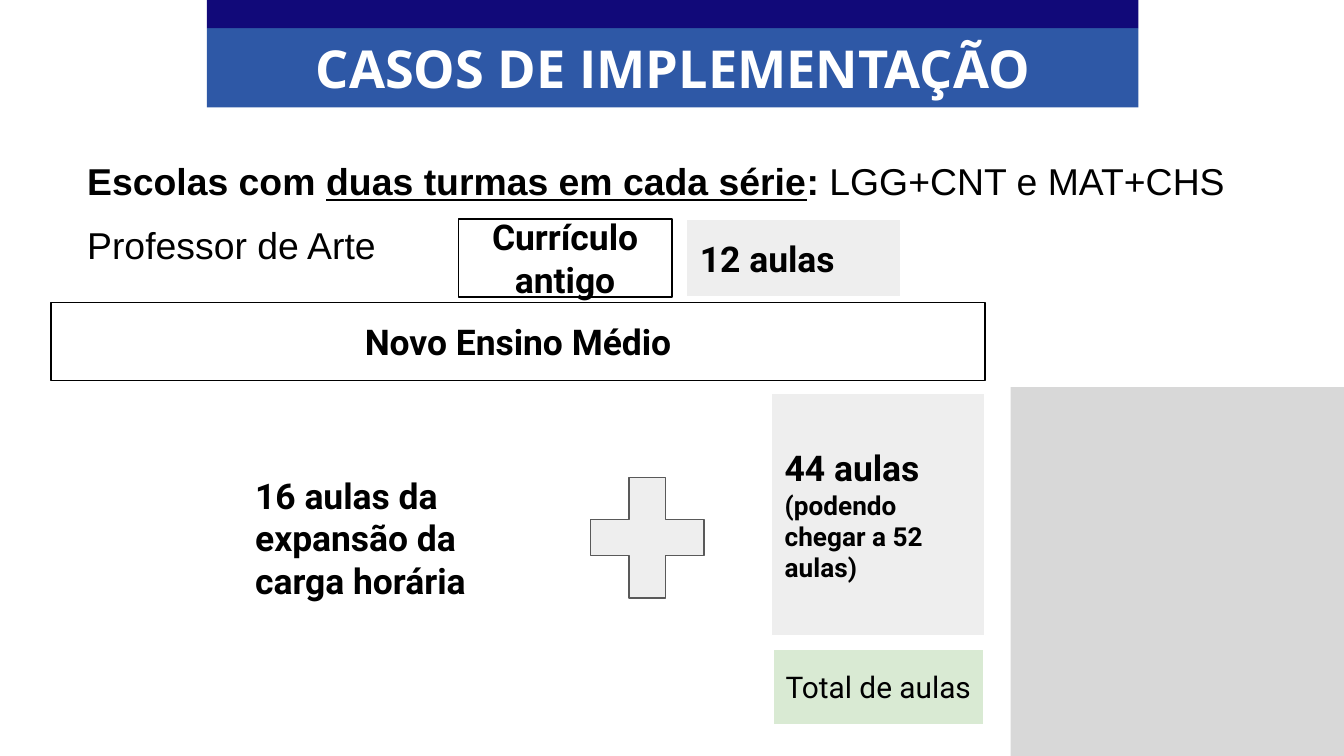
from dataclasses import dataclass

from lxml import etree
from pptx import Presentation
from pptx import util as u
from pptx.dml.color import RGBColor
from pptx.enum import shapes, text
from pptx.oxml.ns import qn


@dataclass(frozen=True)
class Theme:
    navy: str = "110979"
    blue: str = "2E58A6"
    white: str = "FFFFFF"
    black: str = "000000"
    pale: str = "EEEEEE"
    green: str = "D9EAD3"
    grey: str = "BFBFBF"
    outline: str = "595959"
    title_font: str = "Open Sans"
    body_font: str = "Arial"
    card_font: str = "Roboto"
    title_size: int = 28
    body_size: int = 20
    card_size: int = 19
    total_size: int = 16
    note_size: int = 14


THEME = Theme()
CELL = u.Inches(0.1)
COLUMNS, ROWS = 100, 56.25
BANNER_LEFT, BANNER_WIDTH = 15.4, 69.3
CARD_WIDTH, CARD_HEIGHT = 15.9, 5.8
CURRICULUM_TOP = 16.3
RESULT_LEFT = 57.4
LEFT, CENTER = text.PP_ALIGN.LEFT, text.PP_ALIGN.CENTER


def place(*cells):
    return [round(CELL * count) for count in cells]


def style_run(run, font, size, color, bold=True, underline=False):
    run.font.name = font
    run.font.size = u.Pt(size)
    run.font.color.rgb = RGBColor.from_string(color)
    run.font.bold = bold
    run.font.underline = underline


def set_frame(frame, side=0.1, vertical=0.1):
    frame.word_wrap = True
    frame.margin_left = frame.margin_right = u.Inches(side)
    frame.margin_top = frame.margin_bottom = u.Inches(vertical)


def add_block(slide, area, fill=None, line=None, weight=0.75,
              preset=shapes.MSO_SHAPE.RECTANGLE):
    block = slide.shapes.add_shape(preset, *place(*area))
    block.shadow.inherit = False
    if fill:
        block.fill.solid()
        block.fill.fore_color.rgb = RGBColor.from_string(fill)
    else:
        block.fill.background()
    if line:
        block.line.color.rgb = RGBColor.from_string(line)
        block.line.width = u.Pt(weight)
    else:
        block.line.fill.background()
    return block


def add_card(slide, area, lines, fill=None, line=THEME.white, weight=0.75,
             align=LEFT, bold=True):
    frame = add_block(slide, area, fill, line, weight).text_frame
    set_frame(frame)
    frame.vertical_anchor = text.MSO_ANCHOR.MIDDLE
    frame.text = "\n".join(words for words, _ in lines)
    for paragraph, (_, size) in zip(frame.paragraphs, lines):
        paragraph.alignment = align
        style_run(paragraph.runs[0], THEME.card_font, size, THEME.black, bold)


def add_banner(slide, title):
    add_block(slide, (BANNER_LEFT, 2.1, BANNER_WIDTH, 5.9), THEME.blue)
    add_block(slide, (BANNER_LEFT, 0, BANNER_WIDTH, 2.1), THEME.navy)
    heading = slide.shapes.add_textbox(*place(BANNER_LEFT, 2.2, BANNER_WIDTH, 5.7))
    set_frame(heading.text_frame, vertical=0.05)
    heading.text_frame.text = title
    paragraph = heading.text_frame.paragraphs[0]
    paragraph.alignment = CENTER
    style_run(paragraph.runs[0], THEME.title_font, THEME.title_size, THEME.white)


def add_intro(slide):
    intro = slide.shapes.add_textbox(*place(5.5, 10.8, 95.4, 10.2))
    set_frame(intro.text_frame)
    schools = intro.text_frame.paragraphs[0]
    teacher = intro.text_frame.add_paragraph()
    teacher.space_before = teacher.space_after = u.Pt(10)
    for paragraph, words, bold, underline in (
        (schools, "Escolas com ", True, False),
        (schools, "duas turmas em cada série", True, True),
        (schools, ": ", True, False),
        (schools, "LGG+CNT e MAT+CHS", False, False),
        (teacher, "Professor de Arte", False, False),
    ):
        run = paragraph.add_run()
        run.text = words
        style_run(run, THEME.body_font, THEME.body_size, THEME.black, bold, underline)


def add_speaker_area(slide):
    area = add_block(slide, (75.2, 28.8, 24.8, 28.1), THEME.grey)
    color = area.fill._xPr.find(qn("a:solidFill"))[0]
    etree.SubElement(color, qn("a:alpha")).set("val", "60000")


def add_plus(slide):
    plus = add_block(slide, (42.4, 33.9, 11.5, 12.2), THEME.pale, THEME.outline,
                     preset=shapes.MSO_SHAPE.MATH_PLUS)
    plus.adjustments[0] = 0.235


def main():
    deck = Presentation()
    deck.slide_width, deck.slide_height = place(COLUMNS, ROWS)
    slide = deck.slides.add_slide(deck.slide_layouts[6])
    size = THEME.card_size

    add_intro(slide)
    add_banner(slide, "CASOS DE IMPLEMENTAÇÃO")
    add_speaker_area(slide)
    add_card(slide, (34.1, CURRICULUM_TOP, CARD_WIDTH, CARD_HEIGHT),
             [("Currículo antigo", size)], THEME.white, THEME.black, align=CENTER)
    add_card(slide, (51.1, CURRICULUM_TOP, CARD_WIDTH, CARD_HEIGHT),
             [("12 aulas", size)], THEME.pale)
    add_card(slide, (3.8, 22.5, 69.5, CARD_HEIGHT),
             [("Novo Ensino Médio", size)], THEME.white, THEME.black, align=CENTER)
    add_card(slide, (RESULT_LEFT, 48.2, CARD_WIDTH, CARD_HEIGHT),
             [("Total de aulas", THEME.total_size)], THEME.green,
             weight=2.25, align=CENTER, bold=False)
    add_card(slide, (RESULT_LEFT, 29.3, CARD_WIDTH, 18),
             [("44 aulas", size), ("(podendo chegar a 52 aulas)", THEME.note_size)],
             THEME.pale)
    add_plus(slide)
    add_card(slide, (18, 34.9, 20.9, 10.2),
             [("16 aulas da expansão da carga horária", size)])

    deck.save("out.pptx")


if __name__ == "__main__":
    main()
